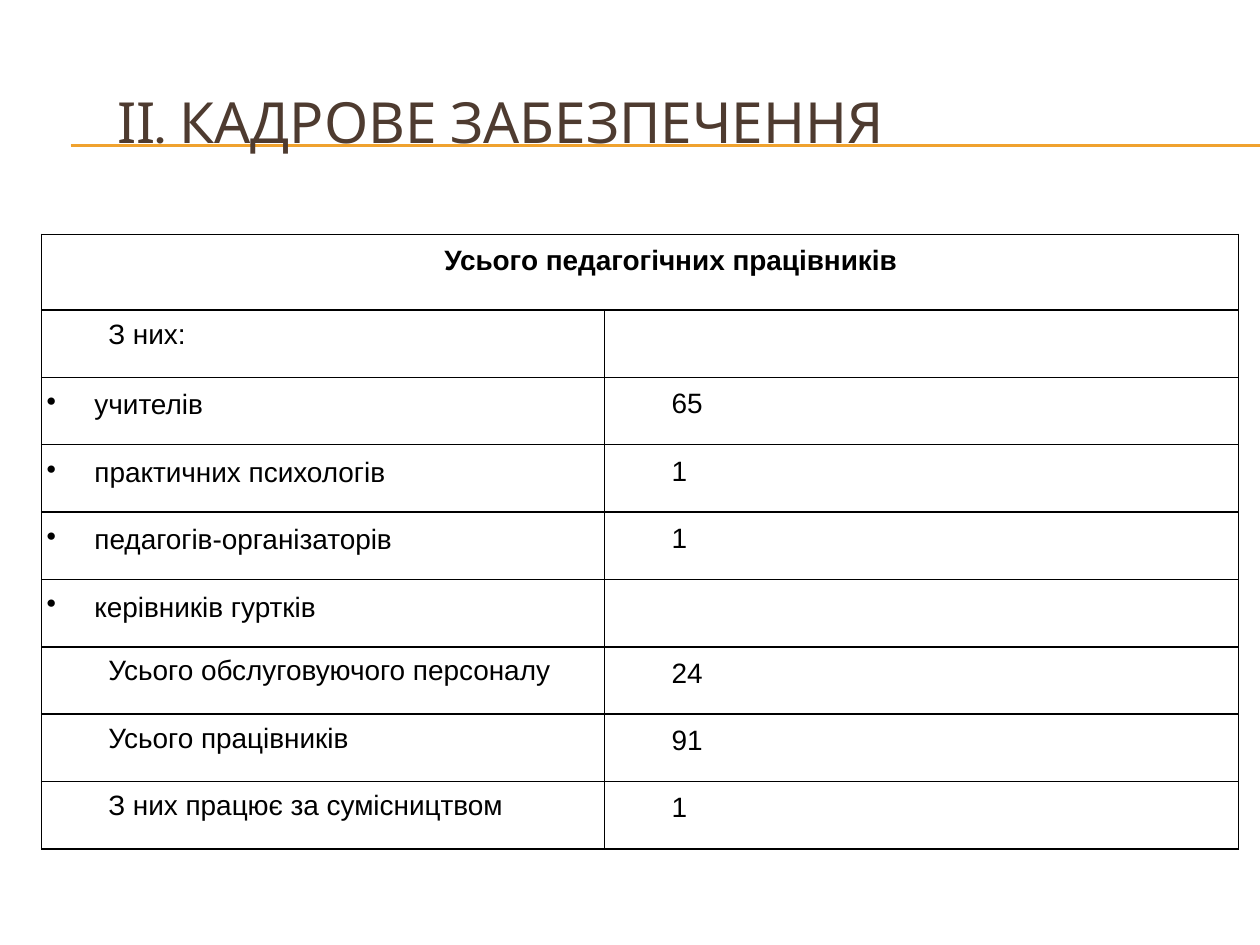
from dataclasses import dataclass

from lxml import etree
from pptx import Presentation, util as u
from pptx.dml.color import RGBColor
from pptx.enum import shapes, text
from pptx.oxml import ns


@dataclass(frozen=True)
class Theme:
    ink: RGBColor = RGBColor(0, 0, 0)
    paper: RGBColor = RGBColor(0xFF, 0xFF, 0xFF)
    brown: RGBColor = RGBColor(0x4E, 0x3B, 0x30)
    gold: RGBColor = RGBColor(0xF0, 0xA2, 0x2E)
    head: str = "Karla"
    body: str = "Arial"
    big: u.Pt = u.Pt(32.4)
    small: u.Pt = u.Pt(16)
    rule: u.Pt = u.Pt(0.75)
    edge: u.Pt = u.Pt(1)


THEME = Theme()
HEAD = "Усього педагогічних працівників"
# Label, count, bulleted
STAFF = [
    ("З них:", "", False),
    ("учителів", "65", True),
    ("практичних психологів", "1", True),
    ("педагогів-організаторів", "1", True),
    ("керівників гуртків", "", True),
    ("Усього обслуговуючого персоналу", "24", False),
    ("Усього працівників", "91", False),
    ("З них працює за сумісництвом", "1", False),
]
PAD = u.Inches(0.04)
INDENT = u.Inches(0.49)
HANG = u.Inches(0.38)


def set_font(para, name, size, color, bold=False):
    font = para.font
    font.name, font.size, font.bold = name, size, bold
    font.color.rgb = color


def set_indent(para, left, first):
    props = para._p.get_or_add_pPr()
    props.set("marL", str(int(left)))
    props.set("indent", str(int(first)))
    return props


def add_rules(slide, left, top, width, gap):
    """Draw the two thin lines that run under the title."""
    for y in (top, top + gap):
        line = slide.shapes.add_connector(
            shapes.MSO_CONNECTOR.STRAIGHT, left, y, left + width, y)
        line.line.color.rgb = THEME.gold
        line.line.width = THEME.rule
        etree.SubElement(line.element.spPr, ns.qn("a:effectLst"))


def add_title(slide, left, top, width, height, words):
    title = slide.shapes.title
    title.left, title.top, title.width, title.height = left, top, width, height
    title.element.getparent().append(title.element)  # in front of the rules
    frame = title.text_frame
    frame.text = words
    frame.word_wrap = True
    frame.auto_size = text.MSO_AUTO_SIZE.NONE
    frame.vertical_anchor = text.MSO_ANCHOR.MIDDLE
    para = frame.paragraphs[0]
    para.alignment = text.PP_ALIGN.LEFT
    set_indent(para, u.Inches(0.5), 0)
    set_font(para, THEME.head, THEME.big, THEME.brown)


def set_edges(cell):
    props = cell._tc.get_or_add_tcPr()
    for place, side in enumerate(("lnL", "lnR", "lnT", "lnB")):
        edge = etree.Element(ns.qn(f"a:{side}"), w=str(int(THEME.edge)))
        fill = etree.SubElement(edge, ns.qn("a:solidFill"))
        etree.SubElement(fill, ns.qn("a:srgbClr"), val=str(THEME.ink))
        props.insert(place, edge)


def fill_cell(cell, words, pitch=1.2, bullet=False, bold=False):
    """Write a cell; a fixed pitch also drops the text by one line."""
    cell.fill.solid()
    cell.fill.fore_color.rgb = THEME.paper
    set_edges(cell)
    cell.margin_left = cell.margin_right = cell.margin_bottom = PAD
    cell.margin_top = PAD + pitch if isinstance(pitch, u.Length) else PAD
    cell.vertical_anchor = text.MSO_ANCHOR.TOP
    cell.text = words
    para = cell.text_frame.paragraphs[0]
    para.line_spacing = pitch
    set_font(para, THEME.body, THEME.small, THEME.ink, bold)
    if bullet:
        props = set_indent(para, HANG, -HANG)
        mark = etree.Element(ns.qn("a:buChar"), char="•")
        props.insert_element_before(mark, "a:tabLst", "a:defRPr", "a:extLst")
    else:
        set_indent(para, 0, INDENT)
    return para


def add_staff(slide, left, top, width, height):
    count = len(STAFF) + 1
    table = slide.shapes.add_table(count, 2, left, top, width, height).table
    table.first_row = table.horz_banding = False
    first = u.Inches(4.47)
    table.columns[0].width, table.columns[1].width = first, width - first
    table.rows[0].height = u.Inches(0.6)
    step = (height - table.rows[0].height) // len(STAFF)

    fill_cell(table.cell(0, 1), "")
    para = fill_cell(table.cell(0, 0), HEAD, bold=True)
    para.alignment = text.PP_ALIGN.CENTER
    table.cell(0, 0).merge(table.cell(0, 1))

    for row, (label, number, bullet) in enumerate(STAFF, 1):
        table.rows[row].height = step
        pitch = u.Pt(11 if bullet else 10)
        fill_cell(table.cell(row, 0), label, pitch, bullet)
        fill_cell(table.cell(row, 1), number)


def main():
    deck = Presentation()
    deck.slide_width, deck.slide_height = u.Inches(10), u.Inches(7.5)
    slide = deck.slides.add_slide(deck.slide_layouts[5])
    left, width = u.Inches(0.33), u.Inches(9.5)
    add_rules(slide, u.Inches(0.56), u.Inches(1.15), u.Inches(9.44),
              u.Inches(0.01))
    add_title(slide, left, u.Inches(0.5), width, u.Inches(0.92),
              "ІІ. КАДРОВЕ ЗАБЕЗПЕЧЕННЯ")
    add_staff(slide, left, u.Inches(1.86), width, u.Inches(4.88))
    deck.save("out.pptx")


if __name__ == "__main__":
    main()
